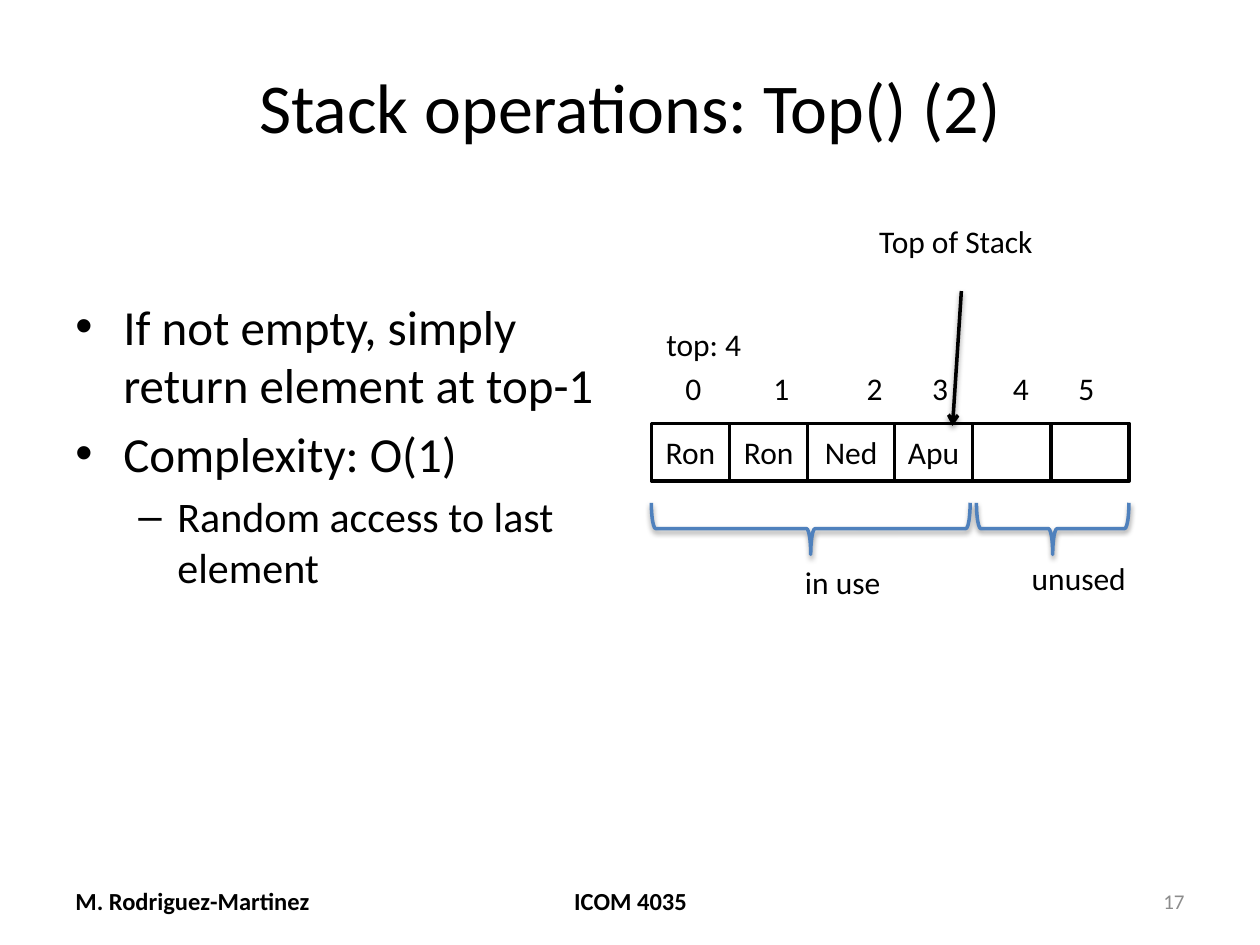
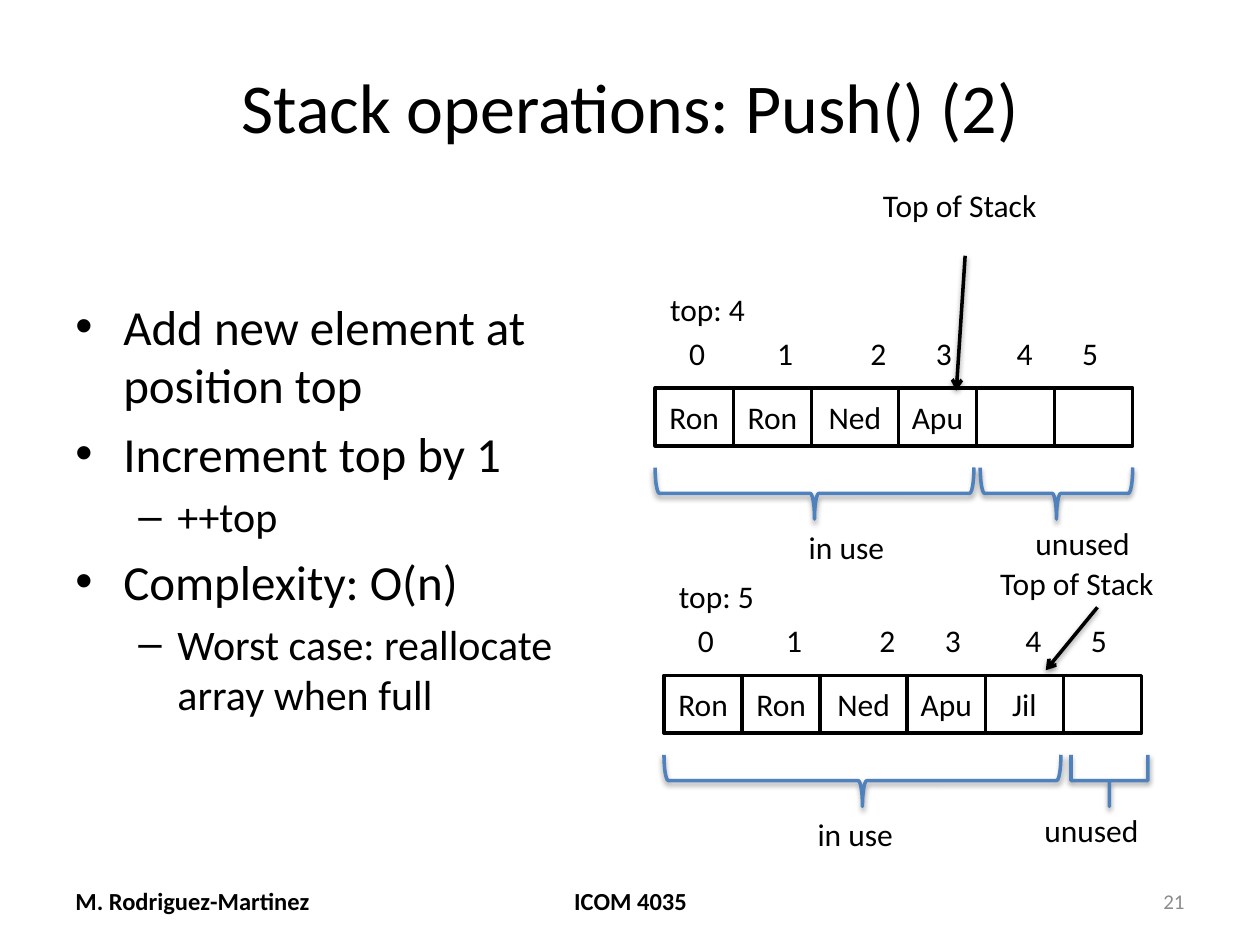
from itertools import accumulate

from lxml import etree
from pptx import Presentation
from pptx.dml.color import RGBColor
from pptx.enum.shapes import MSO_CONNECTOR, MSO_SHAPE
from pptx.enum.text import MSO_ANCHOR, PP_ALIGN
from pptx.oxml.ns import qn
from pptx.util import Inches, Pt

RECT, BRACE = MSO_SHAPE.RECTANGLE, MSO_SHAPE.LEFT_BRACE
STRAIGHT = MSO_CONNECTOR.STRAIGHT
TOP, MIDDLE = MSO_ANCHOR.TOP, MSO_ANCHOR.MIDDLE
LEFT, CENTER, RIGHT = PP_ALIGN.LEFT, PP_ALIGN.CENTER, PP_ALIGN.RIGHT

W, H = 10, 7.5
MARGIN = 0.05 * W
FONT = "Calibri"
COLORS = {"ink": "000000", "paper": "FFFFFF", "brace": "4F81BD", "number": "8C8C8C"}
CELL_WIDTHS = [0.62, 0.62, 0.69, 0.62, 0.62, 0.62]
CELL_EDGES = list(accumulate(CELL_WIDTHS, initial=0))
CELL_HEIGHT, BRACE_HEIGHT, LABEL_HEIGHT = 0.46, 0.41, 0.4
INDEX_TABS = [0.70, 1.44, 1.96, 2.60, 3.12]
BULLETS = [("•", 28, 0.38, 0.38), ("–", 24, 0.81, 0.31)]
FROM_ABOVE = ((1.71, -1.65), (2.46, -1.05), (2.39, 0.02))
FROM_RIGHT = ((2.57, -0.93), (3.44, -0.54), (3.03, -0.04))


def rgb(name):
    """Return a palette colour."""
    return RGBColor.from_string(COLORS[name])


def add_run(p, text, size=18, color="ink", bold=False):
    """Append a formatted run to a paragraph."""
    r = p.add_run()
    r.text = text
    r.font.name, r.font.size, r.font.bold = FONT, Pt(size), bold
    r.font.color.rgb = rgb(color)


def add_text(s, text, x, y, w, h=LABEL_HEIGHT, align=LEFT, anchor=TOP, wrap=False, **style):
    """Add a one-paragraph text box and return its paragraph."""
    tf = s.shapes.add_textbox(Inches(x), Inches(y), Inches(w), Inches(h)).text_frame
    tf.word_wrap, tf.vertical_anchor = wrap, anchor
    p = tf.paragraphs[0]
    p.alignment = align
    add_run(p, text, **style)
    return p


def add_shadow(sp):
    """Give a shape or connector a soft shadow falling straight down."""
    effects = etree.SubElement(sp._element.spPr, qn("a:effectLst"))
    shadow = etree.SubElement(effects, qn("a:outerShdw"), blurRad=str(Pt(3.1)),
                              dist=str(Pt(1.6)), dir="5400000", rotWithShape="0")
    color = etree.SubElement(shadow, qn("a:srgbClr"), val=COLORS["ink"])
    etree.SubElement(color, qn("a:alpha"), val="38000")


def set_line(sp, color):
    """Set the outline shared by all parts of the diagrams."""
    sp.line.color.rgb = rgb(color)
    sp.line.width = Pt(2)


def add_cell(s, text, x, y, w):
    """Add one array cell."""
    sp = s.shapes.add_shape(RECT, Inches(x), Inches(y), Inches(w), Inches(CELL_HEIGHT))
    sp.shadow.inherit = False
    sp.fill.solid()
    sp.fill.fore_color.rgb = rgb("paper")
    set_line(sp, "ink")
    if text:
        tf = sp.text_frame
        tf.margin_left = tf.margin_right = 0
        tf.vertical_anchor = MIDDLE
        tf.paragraphs[0].alignment = CENTER
        add_run(tf.paragraphs[0], text)


def add_brace(s, x, y, w, square=False):
    """Add a brace that opens upward over the given width."""
    left, top = x + (w - BRACE_HEIGHT) / 2, y + (BRACE_HEIGHT - w) / 2
    sp = s.shapes.add_shape(BRACE, Inches(left), Inches(top), Inches(BRACE_HEIGHT), Inches(w))
    sp.rotation = 270
    if square:
        sp.adjustments[0] = 0
    sp.fill.background()
    set_line(sp, "brace")
    add_shadow(sp)


def add_arrow(s, start, end):
    """Add an arrow between two points."""
    cx = s.shapes.add_connector(STRAIGHT, *(Inches(v) for v in (*start, *end)))
    set_line(cx, "ink")
    etree.SubElement(cx.line._get_or_add_ln(), qn("a:tailEnd"), type="arrow")
    add_shadow(cx)


def add_indices(s, x, y):
    """Number the cells with tab stops."""
    text = "\t".join(str(i) for i in range(len(CELL_WIDTHS)))
    p = add_text(s, text, x, y, 3.48, wrap=True)
    tabs = etree.SubElement(p._p.get_or_add_pPr(), qn("a:tabLst"))
    for pos in INDEX_TABS:
        etree.SubElement(tabs, qn("a:tab"), pos=str(Inches(pos)), algn="l")


def add_stack(s, x, y, names, pointer, gap=0.03, square=False):
    """Draw a stack array with its labels, braces and top pointer."""
    used = len(names)
    cells = names + [""] * (len(CELL_WIDTHS) - used)
    for name, edge, width in zip(cells, CELL_EDGES, CELL_WIDTHS):
        add_cell(s, name, x + edge, y, width)
    add_indices(s, x + 0.17, y - 0.48)
    add_text(s, f"top: {used}", x + 0.02, y - 0.83, 0.81)
    split, brace_y = CELL_EDGES[used], y + 0.63
    add_brace(s, x, brace_y, split - 0.02)
    add_brace(s, x + split + gap, brace_y, 1.21 if not square else 0.61, square)
    add_text(s, "in use", x + 1.12, y + 1.06, 0.81)
    add_text(s, "unused", x + 2.92, y + 1.03, 0.96)
    label, start, end = ((x + dx, y + dy) for dx, dy in pointer)
    add_text(s, "Top of Stack", *label, 1.46)
    add_arrow(s, start, end)


def add_bullets(s, items):
    """Add the two-level bullet list in the left column."""
    box = s.shapes.add_textbox(Inches(MARGIN), Inches(1.75), Inches(4.42), Inches(0.66 * H))
    tf = box.text_frame
    tf.word_wrap, tf.margin_top = True, Inches(0.6)
    for i, (level, text) in enumerate(items):
        p = tf.paragraphs[0] if i == 0 else tf.add_paragraph()
        bullet, size, margin, hanging = BULLETS[level]
        p.level = level
        if i:
            p.space_before = Pt(0.2 * size)
        pPr = p._p.get_or_add_pPr()
        pPr.set("marL", str(Inches(margin)))
        pPr.set("indent", str(-Inches(hanging)))
        etree.SubElement(pPr, qn("a:buFont"), typeface="Arial")
        etree.SubElement(pPr, qn("a:buChar"), char=bullet)
        add_run(p, text, size)


def add_slide(prs, title, number, items):
    """Add a slide with title, bullet list and footer."""
    s = prs.slides.add_slide(prs.slide_layouts[5])
    sp = s.shapes.title
    sp.left, sp.top = Inches(MARGIN), Inches(0.04 * H)
    sp.width, sp.height = Inches(0.9 * W), Inches(1.07)
    tf = sp.text_frame
    tf.vertical_anchor = MIDDLE
    tf.paragraphs[0].alignment = CENTER
    add_run(tf.paragraphs[0], title, 40)
    add_bullets(s, items)
    footer = {"y": 6.95, "anchor": MIDDLE, "wrap": True}
    add_text(s, "M. Rodriguez-Martinez", MARGIN, w=2.33, size=14, bold=True, **footer)
    add_text(s, "ICOM 4035", 3.42, w=3.17, align=CENTER, size=14, bold=True, **footer)
    add_text(s, str(number), 7.17, w=2.33, align=RIGHT, size=12, color="number", **footer)
    return s


def main():
    """Build the two stack slides."""
    prs = Presentation()
    prs.slide_width, prs.slide_height = Inches(W), Inches(H)
    names = ["Ron", "Ron", "Ned", "Apu"]

    s = add_slide(prs, "Stack operations: Top() (2)", 17, [
        (0, "If not empty, simply return element at top-1"),
        (0, "Complexity: O(1)"),
        (1, "Random access to last element")])
    add_stack(s, 5.17, 3.36, names, FROM_ABOVE)

    s = add_slide(prs, "Stack operations: Push() (2)", 21, [
        (0, "Add new element at position top"),
        (0, "Increment top by 1"),
        (1, "++top"),
        (0, "Complexity: O(n)"),
        (1, "Worst case: reallocate array when full")])
    add_stack(s, 5.2, 3.08, names, FROM_ABOVE)
    add_stack(s, 5.27, 5.36, names + ["Jil"], FROM_RIGHT, gap=0.06, square=True)

    prs.save("out.pptx")


if __name__ == "__main__":
    main()
